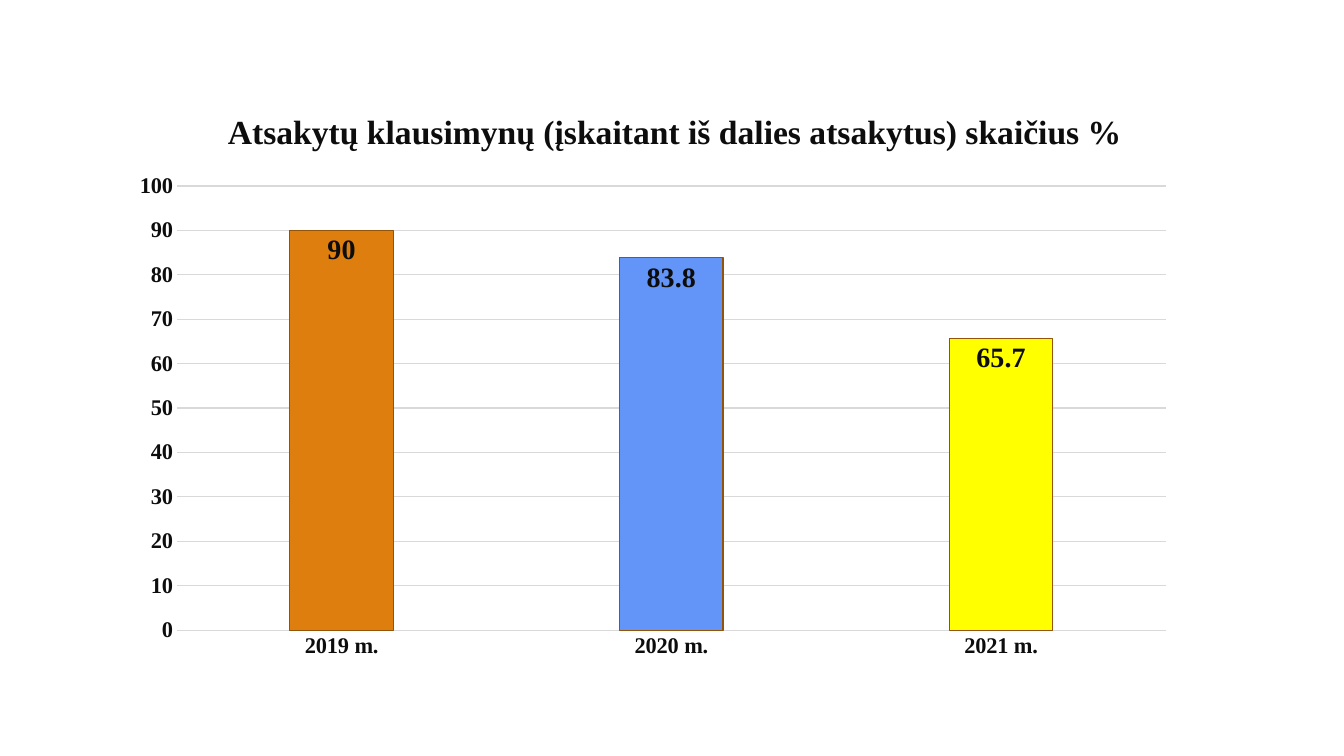
from pptx import Presentation
from pptx.chart.data import CategoryChartData
from pptx.dml.color import RGBColor
from pptx.enum.chart import XL_CHART_TYPE, XL_LABEL_POSITION, XL_TICK_MARK
from pptx.oxml import parse_xml
from pptx.oxml.ns import nsdecls, qn
from pptx.util import Inches, Pt

TEXT = RGBColor(0x0D, 0x0D, 0x0D)
GRID = RGBColor(0xD9, 0xD9, 0xD9)
OUTLINE = RGBColor(0x93, 0x54, 0x0A)
ORANGE = RGBColor(0xDD, 0x7E, 0x0E)
BLUE = RGBColor(0x63, 0x94, 0xF7)
YELLOW = RGBColor(0xFF, 0xFF, 0x00)

TITLE = "Atsakytų klausimynų (įskaitant iš dalies atsakytus) skaičius %"
YEARS = {"2019 m.": (90, ORANGE), "2020 m.": (83.8, BLUE), "2021 m.": (65.7, YELLOW)}


def format_font(font, size):
    values = {"name": "Times New Roman", "size": Pt(size), "bold": True}
    for attribute, value in values.items():
        setattr(font, attribute, value)
    font.color.rgb = TEXT


def set_layout(parent, index, values):
    """Place a chart part by shares of the chart's size."""
    for old_layout in parent.findall(qn("c:layout")):
        parent.remove(old_layout)
    settings = "".join(f'<c:{tag} val="{value}"/>' for tag, value in values.items())
    parent.insert(index, parse_xml(
        f'<c:layout {nsdecls("c")}><c:manualLayout>{settings}</c:manualLayout></c:layout>'))


# Slide
presentation = Presentation()
presentation.slide_width = Inches(13.33)
presentation.slide_height = Inches(7.5)
slide = presentation.slides.add_slide(presentation.slide_layouts[6])

# Chart with one column per year
chart_data = CategoryChartData()
chart_data.categories = list(YEARS)
chart_data.add_series("Series 1", [value for value, color in YEARS.values()])
chart = slide.shapes.add_chart(
    XL_CHART_TYPE.COLUMN_CLUSTERED,
    Inches(0.79), Inches(0.79), Inches(11.75), Inches(5.93), chart_data).chart
chart.has_legend = False
chart.font.name = "Calibri"
chart.font.size = Pt(10)

# Chart title
chart.has_title = True
title_frame = chart.chart_title.text_frame
title_frame.text = TITLE
format_font(title_frame.paragraphs[0].runs[0].font, 24)
chart.chart_title.include_in_layout = False
set_layout(chart.chart_title._element, 1,
           {"xMode": "edge", "yMode": "edge", "x": 0.12, "y": 0.04})

# Plot area
plot = chart.plots[0]
plot.gap_width = 219
plot.overlap = -27
plot.vary_by_categories = False
set_layout(chart._chartSpace.chart.plotArea, 0,
           {"layoutTarget": "inner", "xMode": "edge", "yMode": "edge",
            "x": 0.082, "y": 0.178, "w": 0.835, "h": 0.743})

# Axes and gridlines
for axis in (chart.category_axis, chart.value_axis):
    axis.major_tick_mark = XL_TICK_MARK.NONE
    axis.minor_tick_mark = XL_TICK_MARK.NONE
    format_font(axis.tick_labels.font, 16)
scale = {"minimum_scale": 0, "maximum_scale": 100, "major_unit": 10,
         "has_major_gridlines": True}
for attribute, value in scale.items():
    setattr(chart.value_axis, attribute, value)
chart.value_axis.format.line.fill.background()
for line in (chart.category_axis.format.line, chart.value_axis.major_gridlines.format.line):
    line.color.rgb = GRID
    line.width = Pt(0.75)

# Column colours
series = plot.series[0]
series.invert_if_negative = False
series.format.fill.solid()
series.format.fill.fore_color.rgb = ORANGE
for index, (value, color) in enumerate(YEARS.values()):
    column = series.points[index].format
    column.fill.solid()
    column.fill.fore_color.rgb = color
    column.line.color.rgb = OUTLINE
    column.line.width = Pt(0.75)

# Value labels
labels = series.data_labels
labels.show_value = True
labels.position = XL_LABEL_POSITION.INSIDE_END
format_font(labels.font, 20)

presentation.save("out.pptx")
